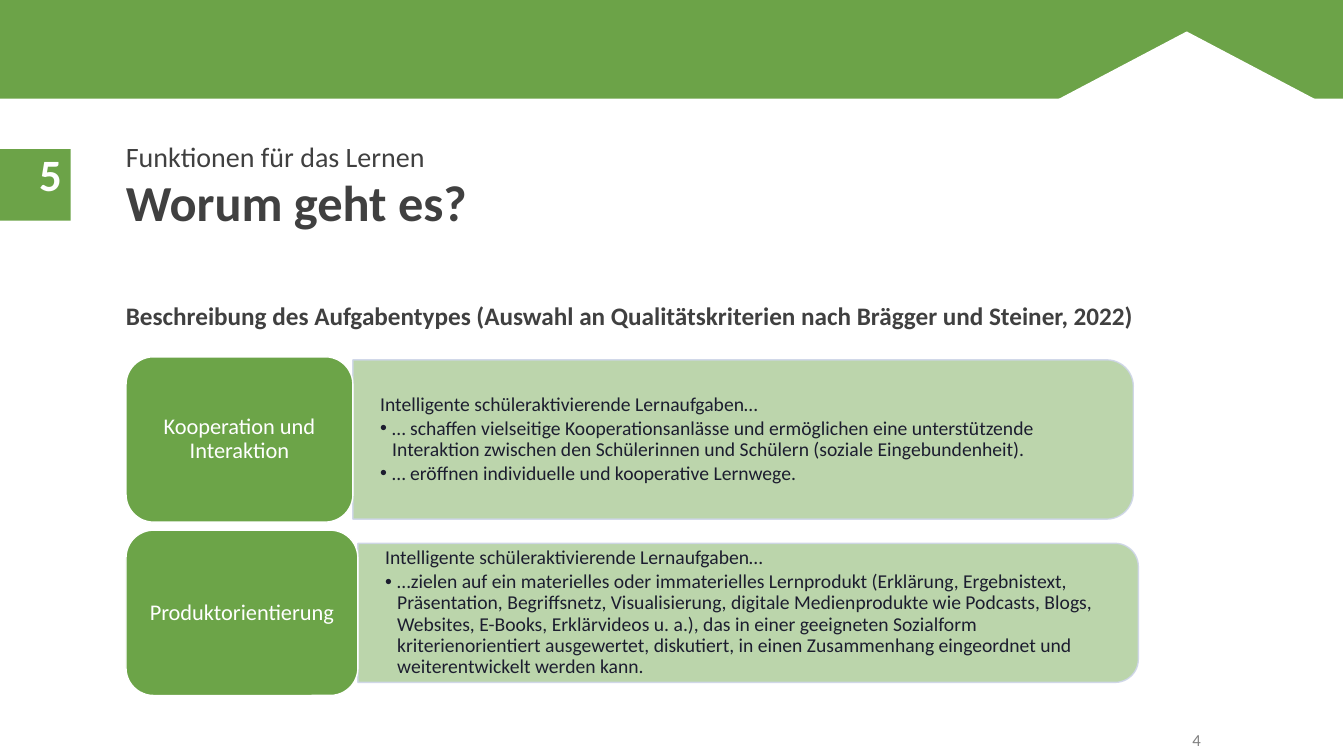
from lxml import etree
from pptx import Presentation
from pptx.dml.color import RGBColor
from pptx.enum import shapes, text
from pptx.oxml.ns import qn
from pptx.util import Inches, Pt

FONT = "Calibri"
GREEN, CARD_GREEN, WHITE = "6CA348", "6CA448", "FFFFFF"
DARK, GREY, INK, EDGE = "404040", "808080", "1C1D2F", "CED5E8"
KIND = shapes.MSO_SHAPE
MIDDLE = text.MSO_ANCHOR.MIDDLE
BOTTOM = text.MSO_ANCHOR.BOTTOM
CENTER = text.PP_ALIGN.CENTER
RIGHT = text.PP_ALIGN.RIGHT

LEAD = "Intelligente schüleraktivierende Lernaufgaben…"
# Label, its top and width, panel height, panel opacity, criteria
CARDS = [
    ("Kooperation und Interaktion", 3.54, 2.25, 1.58, 45, [
        "… schaffen vielseitige Kooperationsanlässe und ermöglichen eine "
        "unterstützende Interaktion zwischen den Schülerinnen und Schülern "
        "(soziale Eingebundenheit).",
        "… eröffnen individuelle und kooperative Lernwege."]),
    ("Produktorientierung", 5.26, 2.3, 1.38, 46, [
        "…zielen auf ein materielles oder immaterielles Lernprodukt (Erklärung, "
        "Ergebnistext, Präsentation, Begriffsnetz, Visualisierung, digitale "
        "Medienprodukte wie Podcasts, Blogs, Websites, E-Books, Erklärvideos "
        "u. a.), das in einer geeigneten Sozialform kriterienorientiert "
        "ausgewertet, diskutiert, in einen Zusammenhang eingeordnet und "
        "weiterentwickelt werden kann."]),
]
LABEL_HEIGHT = 1.64
PANEL_WIDTH = 7.74


def color(value):
    return RGBColor.from_string(value)


def set_opacity(fill, percent):
    """Make a solid fill, of a shape or a line, partly transparent."""
    element = fill._xPr.find(qn("a:solidFill"))[0]
    etree.SubElement(element, qn("a:alpha"), val=str(percent * 1000))


def add_shape(page, kind, left, top, width, height, fill, line=None):
    shape = page.shapes.add_shape(kind, *map(Inches, (left, top, width, height)))
    shape.shadow.inherit = False
    shape.fill.solid()
    shape.fill.fore_color.rgb = color(fill)
    if line:
        shape.line.color.rgb = color(line)
        shape.line.width = Pt(1)
    else:
        shape.line.fill.background()
    return shape


def style(para, size, shade, bold=False, align=None, spacing=0.9):
    para.line_spacing = spacing
    para.alignment = align
    para.font.size = Pt(size)
    para.font.name = FONT
    para.font.bold = bold
    para.font.color.rgb = color(shade)


def set_frame(shape, anchor, side=0.1, edge=0.05):
    frame = shape.text_frame
    frame.word_wrap = True
    frame.vertical_anchor = anchor
    frame.margin_left = frame.margin_right = Inches(side)
    frame.margin_top = frame.margin_bottom = Inches(edge)
    return frame


def add_text(page, words, left, top, width, height, size, shade,
             anchor=text.MSO_ANCHOR.TOP, **looks):
    box = page.shapes.add_textbox(*map(Inches, (left, top, width, height)))
    para = set_frame(box, anchor).paragraphs[0]
    para.text = words
    style(para, size, shade, **looks)


def add_banner(page):
    add_shape(page, KIND.RECTANGLE, -0.01, 0, 13.33, 0.98, GREEN)
    add_shape(page, KIND.ISOSCELES_TRIANGLE, 9.55, 0.32, 4.44, 1.17, WHITE, WHITE)


def add_chapter_number(page, number, top):
    add_shape(page, KIND.RECTANGLE, -0.01, top, 0.71, 0.71, GREEN)
    add_text(page, number, 0.29, top - 0.07, 0.36, 0.64, 32, WHITE,
             bold=True, spacing=1)


def add_headings(page, left):
    add_text(page, "Funktionen für das Lernen", left, 1.22, 9.94, 0.55, 20, DARK,
             anchor=BOTTOM)
    add_text(page, "Worum geht es?", left, 1.73, 9.94, 0.63, 36, DARK,
             anchor=BOTTOM, bold=True)
    add_text(page, "Beschreibung des Aufgabentypes (Auswahl an Qualitätskriterien "
             "nach Brägger und Steiner, 2022)", left, 2.96, 10.86, 0.5, 18, DARK,
             bold=True)


def add_panel(page, left, middle, height, opacity, criteria):
    """Place a panel, rounded on its right side, centred on a height."""
    panel = add_shape(page, KIND.ROUND_2_SAME_RECTANGLE,
                      left + (PANEL_WIDTH - height) / 2, middle - PANEL_WIDTH / 2,
                      height, PANEL_WIDTH, CARD_GREEN, EDGE)
    panel.rotation = 90
    set_opacity(panel.fill, opacity)
    set_opacity(panel.line.fill, 90)

    inner = height - 0.15
    box = page.shapes.add_textbox(*map(Inches, (left, middle - inner / 2,
                                                PANEL_WIDTH - 0.08, inner)))
    frame = set_frame(box, MIDDLE, 0.27, 0.14)
    for index, words in enumerate([LEAD, *criteria]):
        para = frame.add_paragraph() if index else frame.paragraphs[0]
        para.text = words
        if index:
            props = para._p.get_or_add_pPr()
            props.set("marL", str(Inches(0.12)))
            props.set("indent", str(-Inches(0.12)))
            etree.SubElement(props, qn("a:buFont"), typeface="Arial")
            etree.SubElement(props, qn("a:buChar"), char="•")
        style(para, 14, INK)
        para.space_after = Pt(2)


def add_card(page, left, label, top, width, height, opacity, criteria):
    add_panel(page, left + width, top + LABEL_HEIGHT / 2, height, opacity, criteria)
    shape = add_shape(page, KIND.ROUNDED_RECTANGLE, left, top, width, LABEL_HEIGHT,
                      CARD_GREEN, WHITE)
    para = set_frame(shape, MIDDLE, 0.15, 0.11).paragraphs[0]
    para.text = label
    style(para, 16, WHITE, align=CENTER)


def main():
    deck = Presentation()
    deck.slide_width, deck.slide_height = Inches(13.33), Inches(7.5)
    page = deck.slides.add_slide(deck.slide_layouts[6])
    add_banner(page)
    add_chapter_number(page, "5", 1.48)
    add_headings(page, 1.15)
    add_text(page, "4", 9.01, 7.17, 3, 0.33, 12, GREY, anchor=MIDDLE, align=RIGHT,
             spacing=1)
    for card in CARDS:
        add_card(page, 1.25, *card)
    deck.save("out.pptx")


if __name__ == "__main__":
    main()
